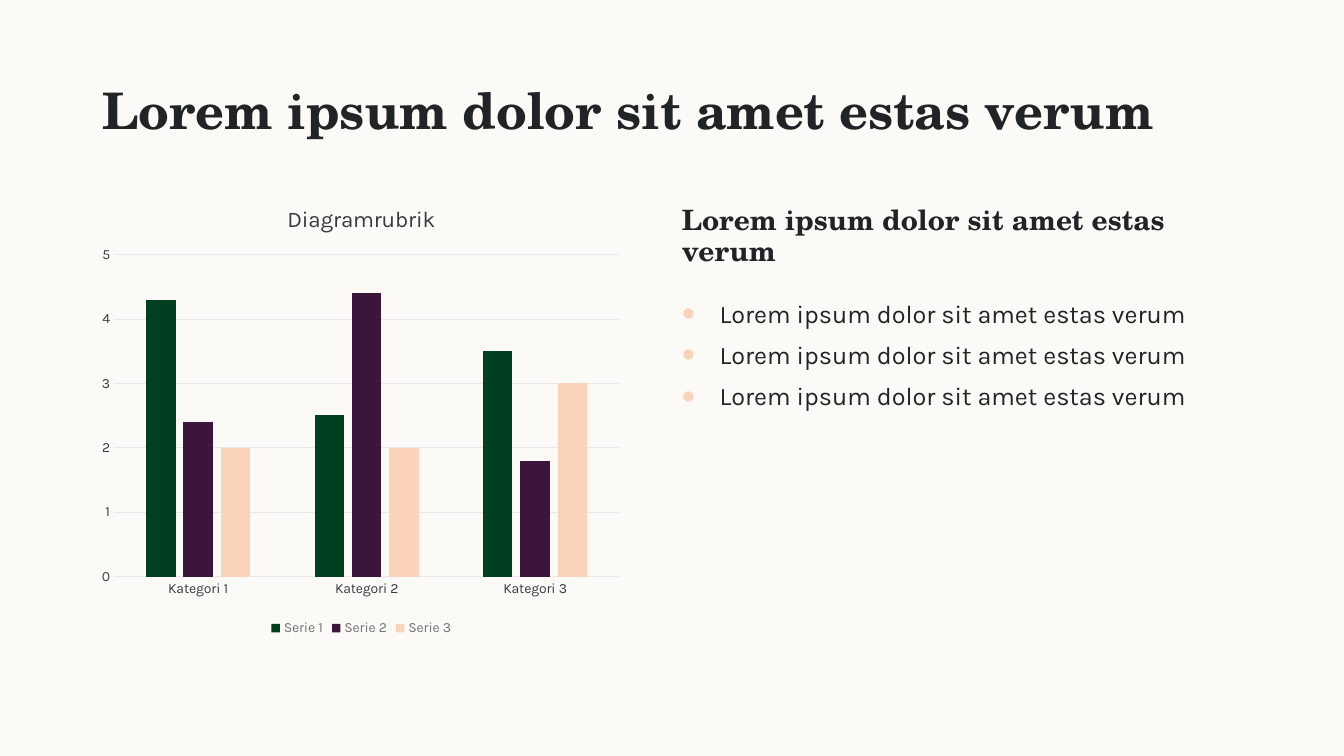
from dataclasses import dataclass

from lxml.etree import SubElement
from pptx import Presentation
from pptx.chart.data import CategoryChartData
from pptx.dml.color import RGBColor
from pptx.enum.chart import XL_CHART_TYPE, XL_LEGEND_POSITION, XL_TICK_MARK
from pptx.enum.text import MSO_ANCHOR, MSO_AUTO_SIZE, PP_ALIGN
from pptx.oxml import parse_xml
from pptx.oxml.ns import nsdecls, qn
from pptx.util import Cm, Pt


@dataclass(frozen=True)
class Theme:
    """Colours, fonts and type sizes."""
    paper: str = "FCFAF6"
    ink: str = "202427"
    title: str = "3A3A3A"
    label: str = "3B3B3B"
    legend: str = "747474"
    grid: str = "E8E8E8"
    bars: tuple = ("004020", "3C153B", "FAD3BA")
    serif: str = "TeX Gyre Schola"
    sans: str = "Karla"
    huge: int = 36
    head: int = 20
    list: int = 18
    chart: int = 16
    small: int = 10


def paint(fill, color):
    """Fill with one solid colour."""
    fill.solid()
    fill.fore_color.rgb = RGBColor.from_string(color)


def type_set(font, name, size, color, bold=False):
    """Set face, size, colour and weight."""
    font.name, font.size, font.bold = name, Pt(size), bold
    font.color.rgb = RGBColor.from_string(color)


class Page:
    """Hold the style and the slide being built."""

    def __init__(self, deck, theme):
        """Add a slide with the paper colour."""
        self.theme = theme
        self.slide = deck.slides.add_slide(deck.slide_layouts[3])
        paint(self.slide.background.fill, theme.paper)

    def text(self, slot, box, lines, face, size, bold=False, bullet=False,
             anchor=MSO_ANCHOR.TOP, fit=MSO_AUTO_SIZE.NONE):
        """Place a placeholder and write its lines."""
        shape = self.slide.placeholders[slot]
        shape.left, shape.top, shape.width, shape.height = map(Cm, box)
        frame = shape.text_frame
        frame.word_wrap, frame.auto_size = True, fit
        frame.vertical_anchor = anchor
        for i, line in enumerate(lines):
            para = frame.add_paragraph() if i else frame.paragraphs[0]
            para.alignment, para.line_spacing = PP_ALIGN.LEFT, 0.9
            para.space_before = Pt(10 if i else 0)
            self.mark(para, bullet)
            run = para.add_run()
            run.text = line
            type_set(run.font, face, size, self.theme.ink, bold)

    def mark(self, para, bullet):
        """Give a paragraph a round bullet or none."""
        props = para._p.get_or_add_pPr()
        indent = Cm(0.95) if bullet else 0
        props.set("marL", str(indent))
        props.set("indent", str(-indent))
        if not bullet:
            SubElement(props, qn("a:buNone"))
            return
        color = SubElement(props, qn("a:buClr"))
        SubElement(color, qn("a:srgbClr"), val=self.theme.bars[2])
        SubElement(props, qn("a:buSzPct"), val="150000")
        SubElement(props, qn("a:buFont"), typeface="Arial")
        SubElement(props, qn("a:buChar"), char="•")

    def chart(self, box, title, cats, rows):
        """Add a clustered column chart."""
        look = self.theme
        data = CategoryChartData()
        data.categories = cats
        for name, vals in rows.items():
            data.add_series(name, vals)
        chart = self.slide.shapes.add_chart(
            XL_CHART_TYPE.COLUMN_CLUSTERED, *map(Cm, box), data).chart
        type_set(chart.font, look.sans, look.small, look.ink)
        chart.has_title = True
        run = chart.chart_title.text_frame.paragraphs[0].add_run()
        run.text = title
        type_set(run.font, look.sans, look.chart, look.title)
        chart.chart_title.include_in_layout = False
        chart.has_legend = True
        chart.legend.position = XL_LEGEND_POSITION.BOTTOM
        chart.legend.include_in_layout = False
        type_set(chart.legend.font, look.sans, look.small, look.legend)
        plot = chart.plots[0]
        plot.gap_width, plot.overlap = 219, -27
        plot.vary_by_categories = False
        for series, color in zip(plot.series, look.bars):
            paint(series.format.fill, color)
        self.axes(chart)
        self.frame(chart, x=0.04, y=0.15, w=0.94, h=0.71)

    def axes(self, chart):
        """Style both axes and the grid."""
        look = self.theme
        cat, val = chart.category_axis, chart.value_axis
        for axis in (cat, val):
            axis.major_tick_mark = axis.minor_tick_mark = XL_TICK_MARK.NONE
            type_set(axis.tick_labels.font, look.sans, look.small, look.label)
        val.minimum_scale, val.maximum_scale, val.major_unit = 0, 5, 1
        val.format.line.fill.background()
        for line, width in ((cat.format.line, 0.75),
                            (val.major_gridlines.format.line, 0.5)):
            paint(line.fill, look.grid)
            line.width = Pt(width)

    def frame(self, chart, **sides):
        """Fix the inner plot area as shares of the chart."""
        area = chart.element.find(".//" + qn("c:plotArea"))
        for old in area.findall(qn("c:layout")):
            area.remove(old)
        modes = '<c:xMode val="edge"/><c:yMode val="edge"/>'
        parts = "".join(f'<c:{k} val="{v}"/>' for k, v in sides.items())
        area.insert(0, parse_xml(
            f'<c:layout {nsdecls("c")}><c:manualLayout>'
            f'<c:layoutTarget val="inner"/>{modes}{parts}'
            '</c:manualLayout></c:layout>'))


def main():
    """Build the slide and save it."""
    deck = Presentation()
    deck.slide_width, deck.slide_height = Cm(33.87), Cm(19.05)
    look = Theme()
    page = Page(deck, look)
    words = "Lorem ipsum dolor sit amet estas verum"
    page.text(0, (2.33, 1.02, 29.21, 3.68), [words], look.serif, look.huge,
              bold=True, anchor=MSO_ANCHOR.MIDDLE)
    page.text(1, (16.93, 5.08, 14.4, 2.41), [words], look.serif, look.head,
              bold=True)
    page.text(2, (16.93, 7.47, 14.4, 3.05), [words] * 3, look.sans, look.list,
              bullet=True, fit=MSO_AUTO_SIZE.SHAPE_TO_FIT_TEXT)
    page.chart((2.33, 4.7, 13.55, 11.43), "Diagramrubrik",
               [f"Kategori {n}" for n in (1, 2, 3)],
               {"Serie 1": (4.3, 2.5, 3.5),
                "Serie 2": (2.4, 4.4, 1.8),
                "Serie 3": (2, 2, 3)})
    deck.save("out.pptx")


if __name__ == "__main__":
    main()
